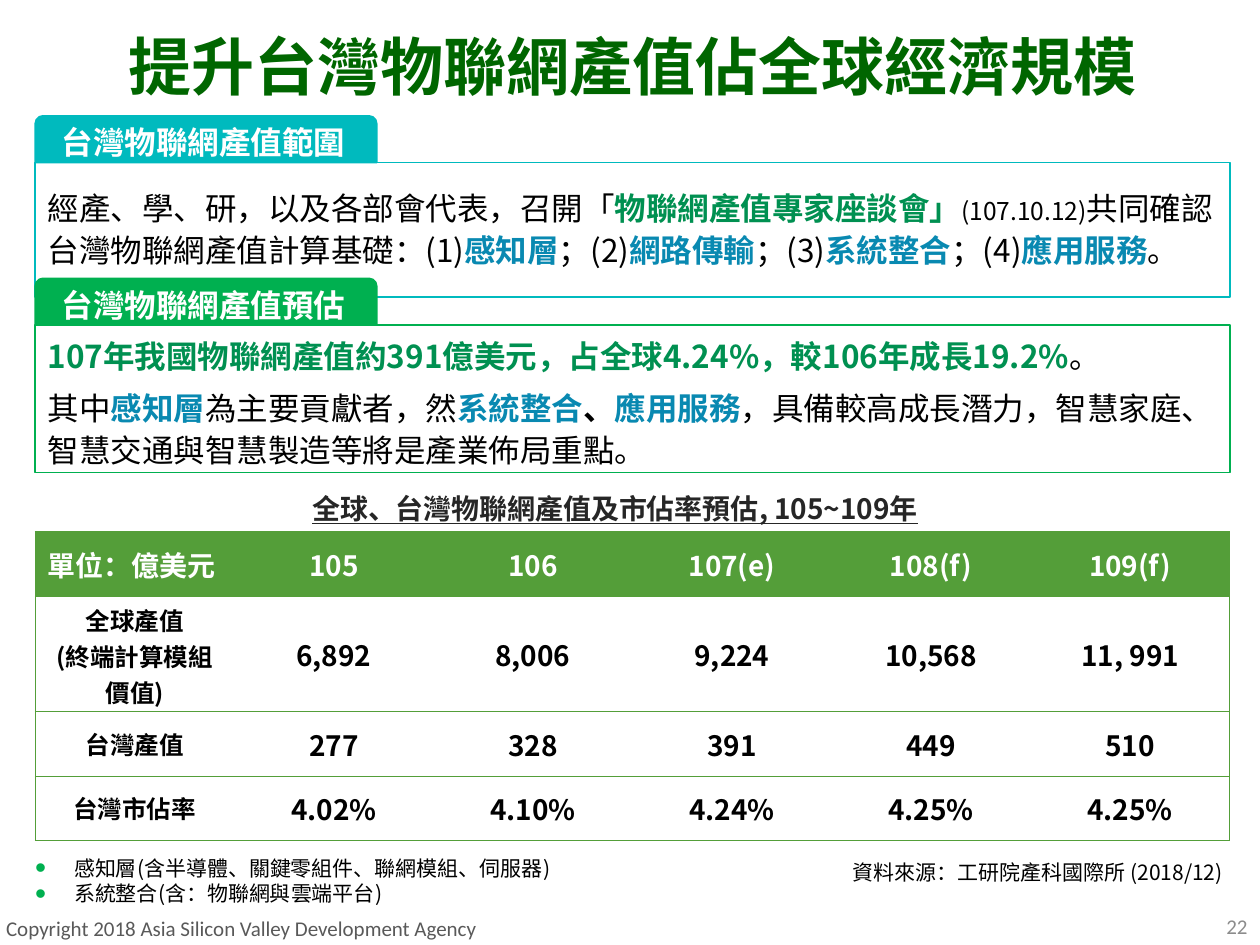
from dataclasses import dataclass

from lxml.etree import SubElement
from pptx import Presentation
from pptx.dml.color import RGBColor
from pptx.enum.shapes import MSO_SHAPE
from pptx.enum.text import MSO_ANCHOR, PP_ALIGN
from pptx.oxml.ns import qn
from pptx.util import Inches, Pt


@dataclass(frozen=True)
class Theme:
    """Colours, fonts and type sizes of the slide."""
    font: str = "Noto Sans CJK TC"
    footer_font: str = "Calibri"
    title: str = "006600"
    teal: str = "00BABE"
    green: str = "00B050"
    table: str = "549E39"
    strong: str = "009051"
    term: str = "0989B1"
    black: str = "000000"
    white: str = "FFFFFF"
    caption: str = "262626"
    footer: str = "595959"
    number: str = "8C8C8C"
    title_size: int = 36
    body_size: int = 18
    table_size: int = 16
    label_size: int = 14
    note_size: int = 12


THEME = Theme()
PLAIN = {"size": THEME.body_size, "color": THEME.black}
STRONG = {**PLAIN, "color": THEME.strong, "bold": True}
TERM = {**PLAIN, "color": THEME.term, "bold": True}
SMALL = {**PLAIN, "size": THEME.label_size}
NOTE = {**PLAIN, "size": THEME.note_size}
TAB = {**PLAIN, "color": THEME.white, "bold": True}

SCOPE = [[
    ("經產、學、研，以及各部會代表，召開「", PLAIN), ("物聯網產值專家座談會」", STRONG),
    ("(107.10.12)", SMALL), ("共同確認台灣物聯網產值計算基礎：(1)", PLAIN),
    ("感知層", TERM), ("；(2)", PLAIN), ("網路傳輸", TERM), ("；(3)", PLAIN),
    ("系統整合", TERM), ("；(4)", PLAIN), ("應用服務", TERM), ("。", PLAIN),
]]
ESTIMATE = [
    [("107年我國物聯網產值約391億美元，占全球4.24%，較106年成長19.2%", STRONG), ("。", PLAIN)],
    [("其中", PLAIN), ("感知層", TERM), ("為主要貢獻者，然", PLAIN), ("系統整合", TERM),
     ("、", {**PLAIN, "bold": True}), ("應用服務", TERM),
     ("，具備較高成長潛力，智慧家庭、智慧交通與智慧製造等將是產業佈局重點。", PLAIN)],
]
ROWS = [
    ["單位：億美元", "105", "106", "107(e)", "108(f)", "109(f)"],
    ["全球產值\v(終端計算模組價值)", "6,892", "8,006", "9,224", "10,568", "11, 991"],
    ["台灣產值", "277", "328", "391", "449", "510"],
    ["台灣市佔率", "4.02%", "4.10%", "4.24%", "4.25%", "4.25%"],
]
ROW_HEIGHTS = [0.51, 0.92, 0.51, 0.51]


def format_run(run, size, color, font=THEME.font, **values):
    """Apply font values to a run, for Latin and East Asian text."""
    for name, value in {"name": font, "size": Pt(size), **values}.items():
        setattr(run.font, name, value)
    run.font.color.rgb = RGBColor.from_string(color)
    SubElement(run.font._element, qn("a:ea"), typeface=font)


def write(frame, paragraphs, **values):
    """Fill a text frame with paragraphs of (text, format) runs."""
    for index, runs in enumerate(paragraphs):
        paragraph = frame.add_paragraph() if index else frame.paragraphs[0]
        for name, value in values.items():
            setattr(paragraph, name, value)
        for text, style in runs:
            run = paragraph.add_run()
            run.text = text
            format_run(run, **style)


def add_text(slide, box, paragraphs, wrap=True, anchor=MSO_ANCHOR.TOP, **values):
    """Add a text box and return its text frame."""
    frame = slide.shapes.add_textbox(*map(Inches, box)).text_frame
    frame.word_wrap = wrap
    frame.vertical_anchor = anchor
    write(frame, paragraphs, **values)
    return frame


def add_panel(slide, kind, box, color, filled):
    """Add a shape that is either filled or only outlined."""
    shape = slide.shapes.add_shape(kind, *map(Inches, box))
    shape.shadow.inherit = False
    shape.line.color.rgb = RGBColor.from_string(color)
    shape.line.width = Pt(1)
    if filled:
        shape.fill.solid()
        shape.fill.fore_color.rgb = RGBColor.from_string(color)
    else:
        shape.fill.background()


def add_title(slide, box, text):
    """Place and format the title placeholder."""
    title = slide.shapes.title
    for name, value in zip(("left", "top", "width", "height"), box):
        setattr(title, name, Inches(value))
    title.text_frame.vertical_anchor = MSO_ANCHOR.MIDDLE
    style = {"size": THEME.title_size, "color": THEME.title, "bold": True}
    write(title.text_frame, [[(text, style)]], alignment=PP_ALIGN.CENTER, line_spacing=0.9)


def add_section(slide, box, color, heading, paragraphs, text_offset):
    """Add a tabbed heading over an outlined panel with body text."""
    left, top, width, height = box
    tab_height = 0.37
    panel = (left, top + tab_height, width, height - tab_height)
    add_panel(slide, MSO_SHAPE.RECTANGLE, panel, color, False)
    tab = (left, top, 2.71, tab_height)
    add_panel(slide, MSO_SHAPE.ROUND_2_SAME_RECTANGLE, tab, color, True)
    add_text(slide, (left + 0.11, top + 0.01, 2.47, 0.4), [[(heading, TAB)]], wrap=False)
    body = (left, top + text_offset, width + 0.09, height - text_offset)
    frame = add_text(slide, body, paragraphs, line_spacing=Pt(24))
    for paragraph in frame.paragraphs[1:]:
        paragraph.space_before = Pt(6)


def set_borders(cell, sides):
    """Draw the named sides of a cell and clear the others."""
    properties = cell._tc.get_or_add_tcPr()
    for index, side in enumerate("LRTB"):
        line = SubElement(properties, qn(f"a:ln{side}"), w=str(Pt(0.5)))
        properties.remove(line)
        properties.insert(index, line)
        if side in sides:
            fill = SubElement(line, qn("a:solidFill"))
            SubElement(fill, qn("a:srgbClr"), val=THEME.table)
        else:
            SubElement(line, qn("a:noFill"))


def format_cell(cell, text, row, column, last_column):
    """Write one table cell with its fill, borders and type."""
    header, label = row == 0, column == 0
    cell.fill.solid()
    cell.fill.fore_color.rgb = RGBColor.from_string(THEME.table if header else THEME.white)
    set_borders(cell, "TB" + "L" * label + "R" * (column == last_column))
    cell.vertical_anchor = MSO_ANCHOR.MIDDLE
    if header and not label:
        for side in ("left", "right", "top", "bottom"):
            setattr(cell, f"margin_{side}", Inches(0 if side == "bottom" else 0.01))
    paragraph = cell.text_frame.paragraphs[0]
    paragraph.text = text
    paragraph.alignment = PP_ALIGN.LEFT if header and label else PP_ALIGN.CENTER
    size = THEME.label_size if label and not header else THEME.table_size
    for run in paragraph.runs:
        format_run(run, size, THEME.white if header else THEME.black, bold=True)


def add_value_table(slide, box):
    """Add the table of output values and market share."""
    columns = len(ROWS[0])
    table = slide.shapes.add_table(len(ROWS), columns, *map(Inches, box)).table
    for column in table.columns:
        column.width = Inches(box[2] / columns)
    for row, texts in enumerate(ROWS):
        table.rows[row].height = Inches(ROW_HEIGHTS[row])
        for column, text in enumerate(texts):
            format_cell(table.cell(row, column), text, row, column, columns - 1)


def add_notes(slide, box, lines):
    """Add the bulleted notes under the table."""
    frame = add_text(slide, box, [[(line, NOTE)] for line in lines], line_spacing=Pt(14.4))
    for paragraph in frame.paragraphs:
        properties = paragraph._p.get_or_add_pPr()
        properties.set("marL", str(Inches(0.31)))
        properties.set("indent", str(-Inches(0.31)))
        color = SubElement(properties, qn("a:buClr"))
        SubElement(color, qn("a:srgbClr"), val=THEME.green)
        SubElement(properties, qn("a:buSzPct"), val="150000")
        SubElement(properties, qn("a:buFont"), typeface="Arial")
        SubElement(properties, qn("a:buChar"), char="•")


def add_footer(slide, top):
    """Add the copyright line and the page number."""
    style = {"size": THEME.note_size, "font": THEME.footer_font}
    add_text(slide, (-0.05, top + 0.04, 5.12, 0.26),
             [[("Copyright 2018 Asia Silicon Valley Development Agency", {**style, "color": THEME.footer})]],
             anchor=MSO_ANCHOR.MIDDLE)
    add_text(slide, (9.59, top, 0.41, 0.3), [[("22", {**style, "color": THEME.number})]],
             anchor=MSO_ANCHOR.MIDDLE, alignment=PP_ALIGN.RIGHT)


def main():
    """Build the slide and save it."""
    presentation = Presentation()
    presentation.slide_width, presentation.slide_height = Inches(10), Inches(7.5)
    slide = presentation.slides.add_slide(presentation.slide_layouts[5])
    add_title(slide, (0.02, 0.01, 10, 1.1), "提升台灣物聯網產值佔全球經濟規模")
    add_section(slide, (0.28, 0.92, 9.48, 1.44), THEME.teal, "台灣物聯網產值範圍", SCOPE, 0.5)
    add_section(slide, (0.28, 2.21, 9.48, 1.54), THEME.green, "台灣物聯網產值預估", ESTIMATE, 0.38)
    caption = {"size": THEME.table_size, "color": THEME.caption, "bold": True, "underline": True}
    add_text(slide, (2.38, 3.85, 5.37, 0.37), [[("全球、台灣物聯網產值及市佔率預估, 105~109年", caption)]])
    add_value_table(slide, (0.28, 4.22, 9.48, sum(ROW_HEIGHTS)))
    add_text(slide, (6.67, 6.77, 3.3, 0.24), [[("資料來源：工研院產科國際所 (2018/12)", NOTE)]])
    add_notes(slide, (0.18, 6.74, 6.4, 0.5),
              ["感知層(含半導體、關鍵零組件、聯網模組、伺服器)", "系統整合(含：物聯網與雲端平台)"])
    add_footer(slide, 7.2)
    presentation.save("out.pptx")


if __name__ == "__main__":
    main()
